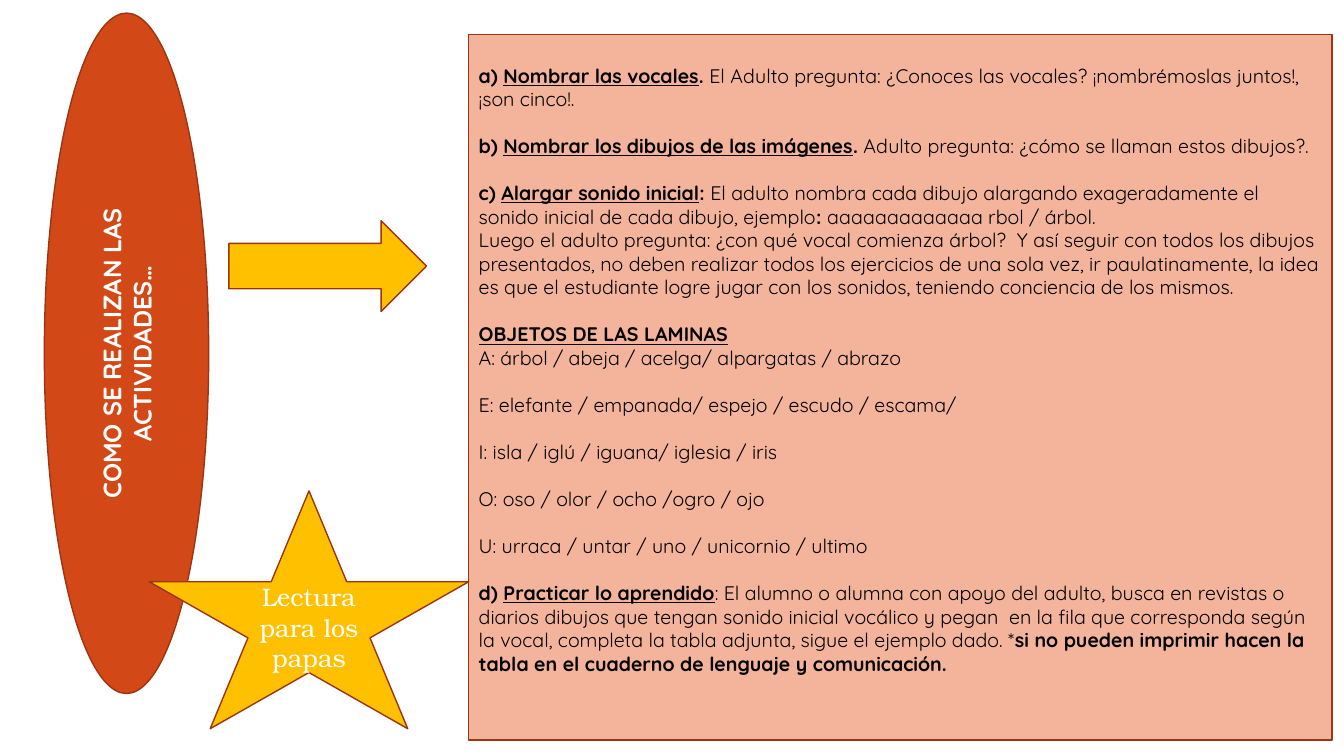
"""Build the slide on how the vowel activities are carried out."""
from dataclasses import dataclass

import pptx
import pptx.dml.color
import pptx.enum.shapes
import pptx.enum.text
import pptx.shapes.autoshape
import pptx.slide
import pptx.util

RGB = pptx.dml.color.RGBColor
SHAPE = pptx.enum.shapes.MSO_SHAPE
ALIGN = pptx.enum.text.PP_ALIGN
ANCHOR = pptx.enum.text.MSO_ANCHOR

PX = 9144
RUST = RGB(0xD3, 0x48, 0x17)
OUTLINE = RGB(0x9C, 0x35, 0x11)
GOLD = RGB(0xFF, 0xC0, 0x00)
SALMON = RGB(0xF4, 0xB3, 0x9B)
WHITE = RGB(0xFF, 0xFF, 0xFF)
BLACK = RGB(0x00, 0x00, 0x00)
SANS = "Quicksand"
SERIF = "TeX Gyre Bonum"
BODY_SIZE = 14
LABEL_SIZE = 18
LINE_GAP = 16.8


@dataclass(frozen=True)
class Box:
    kind: SHAPE
    left: int
    top: int
    width: int
    height: int
    fill: RGB
    rotation: int = 0


@dataclass(frozen=True)
class Run:
    text: str
    bold: bool = False
    underline: bool = False


@dataclass(frozen=True)
class Para:
    runs: tuple[Run, ...]
    gap: bool = True


ELLIPSE = Box(SHAPE.OVAL, -212, 269, 675, 163, RUST, 270)
ARROW = Box(SHAPE.RIGHT_ARROW, 227, 219, 196, 90, GOLD)
PANEL = Box(SHAPE.RECTANGLE, 465, 34, 856, 700, SALMON)
STAR = Box(SHAPE.STAR_5_POINT, 148, 487, 317, 236, GOLD)


def step(letter: str, heading: str, mark: str, *rest: Run) -> Para:
    """Return a lettered step with an underlined heading."""
    return Para((Run(f"{letter}) ", True), Run(heading, True, True), Run(mark, True), *rest))


def plain(text: str, gap: bool = True) -> Para:
    """Return a paragraph of one plain run."""
    return Para((Run(text),), gap)


INSTRUCTIONS = (
    step("a", "Nombrar las vocales", ". ",
         Run("El Adulto pregunta: ¿Conoces las vocales? ¡nombrémoslas juntos!, ¡son cinco!.")),
    step("b", "Nombrar los dibujos de las imágenes", ". ",
         Run("Adulto pregunta: ¿cómo se llaman estos dibujos?.")),
    step("c", "Alargar sonido inicial", ": ",
         Run("El adulto nombra cada dibujo alargando exageradamente el sonido inicial "
             "de cada dibujo, ejemplo"),
         Run(": ", True),
         Run("aaaaaaaaaaaaa rbol / árbol.")),
    plain("Luego el adulto pregunta: ¿con qué vocal comienza árbol?  Y así seguir con todos "
          "los dibujos presentados, no deben realizar todos los ejercicios de una sola vez, "
          "ir paulatinamente, la idea es que el estudiante logre jugar con los sonidos, "
          "teniendo conciencia de los mismos.", gap=False),
    Para((Run("OBJETOS DE LAS LAMINAS", True, True),)),
    plain("A: árbol / abeja / acelga/ alpargatas / abrazo", gap=False),
    plain("E: elefante / empanada/ espejo / escudo / escama/"),
    plain("I: isla / iglú / iguana/ iglesia / iris"),
    plain("O: oso / olor / ocho /ogro / ojo"),
    plain("U: urraca / untar / uno / unicornio / ultimo"),
    Para((Run("d) ", True), Run("Practicar lo aprendido", True, True),
          Run(": El alumno o alumna con apoyo del adulto, busca en revistas o diarios dibujos "
              "que tengan sonido inicial vocálico y pegan  en la fila que corresponda según "
              "la vocal, completa la tabla adjunta, sigue el ejemplo dado. *"),
          Run("si no pueden imprimir hacen la tabla en el cuaderno de lenguaje y "
              "comunicación.", True))),
)


def add_box(s: pptx.slide.Slide, box: Box) -> pptx.shapes.autoshape.Shape:
    """Draw a filled and outlined preset shape."""
    sp = s.shapes.add_shape(box.kind, box.left * PX, box.top * PX,
                            box.width * PX, box.height * PX)
    sp.rotation = box.rotation
    sp.shadow.inherit = False
    sp.fill.solid()
    sp.fill.fore_color.rgb = box.fill
    sp.line.color.rgb = OUTLINE
    sp.line.width = pptx.util.Pt(1)
    return sp


def add_text(sp: pptx.shapes.autoshape.Shape, paras: tuple[Para, ...], font: str,
             size: int, color: RGB, align: ALIGN, anchor: ANCHOR) -> None:
    """Write the paragraphs run by run into a shape."""
    tf = sp.text_frame
    tf.word_wrap = True
    tf.vertical_anchor = anchor
    for i, para in enumerate(paras):
        p = tf.add_paragraph() if i else tf.paragraphs[0]
        p.alignment = align
        if i and para.gap:
            p.space_before = pptx.util.Pt(LINE_GAP)
        for run in para.runs:
            r = p.add_run()
            r.text = run.text
            r.font.name = font
            r.font.size = pptx.util.Pt(size)
            r.font.bold = run.bold
            r.font.underline = run.underline
            r.font.color.rgb = color


def main() -> None:
    """Build and save the presentation."""
    prs = pptx.Presentation()
    prs.slide_width = 1333 * PX
    prs.slide_height = 750 * PX
    s = prs.slides.add_slide(prs.slide_layouts[6])

    heading = Para((Run("COMO SE REALIZAN LAS ACTIVIDADES…", True),))
    add_text(add_box(s, ELLIPSE), (heading,), SANS, LABEL_SIZE, WHITE,
             ALIGN.CENTER, ANCHOR.MIDDLE)
    add_box(s, ARROW)
    panel = add_box(s, PANEL)
    panel.text_frame.margin_top = 29 * PX
    add_text(panel, INSTRUCTIONS, SANS, BODY_SIZE, BLACK, ALIGN.LEFT, ANCHOR.TOP)
    add_text(add_box(s, STAR), (plain("Lectura para los papas"),), SERIF, LABEL_SIZE,
             WHITE, ALIGN.CENTER, ANCHOR.MIDDLE)

    prs.save("out.pptx")


if __name__ == "__main__":
    main()
